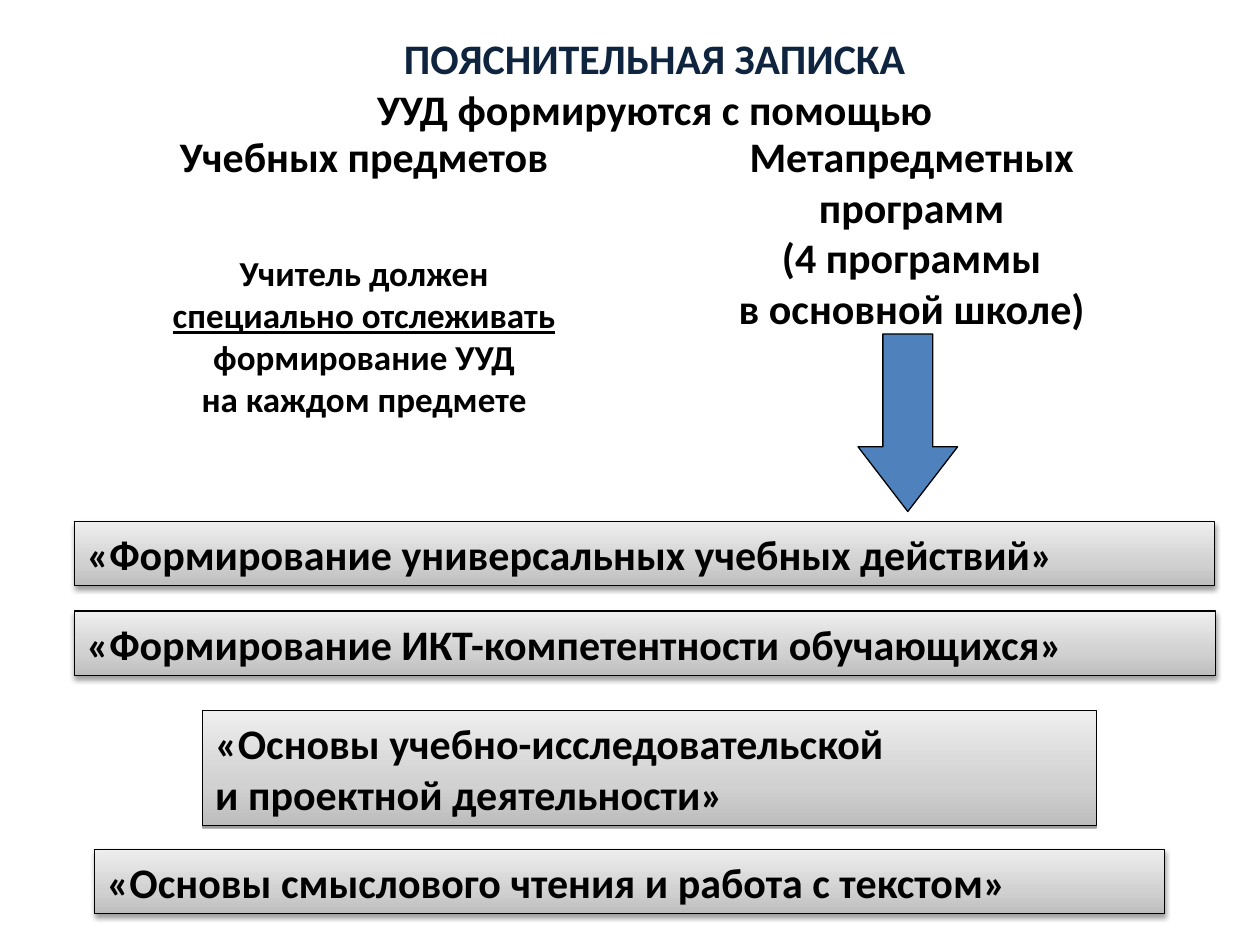
"""Builds the slide on how universal learning actions are formed."""
from dataclasses import dataclass

from pptx import Presentation
from pptx import util as u
from pptx.dml.color import RGBColor
from pptx.enum import shapes, text
from pptx.oxml import parse_xml
from pptx.oxml.ns import nsdecls

BLACK, NAVY, BLUE = "000000", "0F243E", "4F81BD"
GRADIENT = ((0, "BDBDBD"), (35, "D1D1D1"), (100, "EEEEEE"))


@dataclass
class Area:
    left: float
    top: float
    width: float
    height: float

    def lengths(self) -> list:
        return [u.Inches(n) for n in (self.left, self.top, self.width, self.height)]


@dataclass
class Label:
    area: Area
    words: str
    size: int = 24
    anchor: text.MSO_ANCHOR = text.MSO_ANCHOR.TOP


@dataclass
class Program:
    area: Area
    words: str
    wrap: bool = False
    blur: float = 3.1


HEADING = Label(Area(2.32, 0.21, 5.75, 0.91),
                "ПОЯСНИТЕЛЬНАЯ ЗАПИСКА\nУУД формируются с помощью")
TEACHER = Label(Area(1.12, 1.78, 3.54, 1.77),
                "Учитель должен\vспециально отслеживать\vформирование УУД\vна каждом предмете",
                20, text.MSO_ANCHOR.MIDDLE)
SUBJECTS = Label(Area(0.99, 0.99, 3.8, 0.5), "Учебных предметов")
META = Label(Area(5.59, 0.99, 3.29, 2.12),
             "Метапредметных программ\v(4 программы\vв основной школе)")
PROGRAMS = (
    Program(Area(0.59, 4.14, 9.05, 0.51), "«Формирование универсальных учебных действий»"),
    Program(Area(0.59, 4.85, 9.06, 0.51), "«Формирование ИКТ-компетентности обучающихся»"),
    Program(Area(1.61, 5.64, 7.09, 0.91),
            "«Основы учебно-исследовательской\vи проектной деятельности»", True, 0),
    Program(Area(0.75, 6.74, 8.49, 0.51), "«Основы смыслового чтения и работа с текстом»"),
)


def paint(color, value: str) -> None:
    color.rgb = RGBColor.from_string(value)


def write(box, words: str, size: int, align, anchor, wrap: bool = True) -> list:
    frame = box.text_frame
    frame.text = words
    frame.word_wrap = wrap
    frame.auto_size = text.MSO_AUTO_SIZE.NONE
    frame.vertical_anchor = anchor
    spans = []
    for para in frame.paragraphs:
        para.alignment = align
        spans.extend(para.runs)
    for span in spans:
        span.font.name = "Calibri"
        span.font.size = u.Pt(size)
        span.font.bold = True
        paint(span.font.color, BLACK)
    return spans


def write_label(box, label: Label) -> list:
    return write(box, label.words, label.size, text.PP_ALIGN.CENTER, label.anchor)


def add_heading(page, label: Label) -> None:
    box = page.shapes.title
    box.left, box.top, box.width, box.height = label.area.lengths()
    paint(write_label(box, label)[0].font.color, NAVY)


def add_label(page, label: Label) -> list:
    return write_label(page.shapes.add_textbox(*label.area.lengths()), label)


def add_outlined(page, kind, area: Area):
    box = page.shapes.add_shape(kind, *area.lengths())
    box.shadow.inherit = False
    paint(box.line.color, BLACK) if box.line.fill.solid() is None else None
    box.line.width = u.Pt(0.75)
    return box


def add_program(page, program: Program) -> None:
    box = add_outlined(page, shapes.MSO_SHAPE.RECTANGLE, program.area)
    stops = "".join(f'<a:gs pos="{place * 1000}"><a:srgbClr val="{value}"/></a:gs>'
                    for place, value in GRADIENT)
    properties = box._element.spPr
    properties.prstGeom.addnext(parse_xml(
        f'<a:gradFill {nsdecls("a")} rotWithShape="1"><a:gsLst>{stops}</a:gsLst>'
        '<a:lin ang="16200000" scaled="0"/></a:gradFill>'))
    properties.find("{*}effectLst").append(parse_xml(
        f'<a:outerShdw {nsdecls("a")} blurRad="{u.Pt(program.blur)}" dist="{u.Pt(1.6)}" '
        f'dir="5400000" rotWithShape="0"><a:srgbClr val="{BLACK}">'
        '<a:alpha val="38000"/></a:srgbClr></a:outerShdw>'))
    write(box, program.words, 24, text.PP_ALIGN.LEFT, text.MSO_ANCHOR.MIDDLE, program.wrap)


def add_arrow(page, area: Area) -> None:
    arrow = add_outlined(page, shapes.MSO_SHAPE.DOWN_ARROW, area)
    arrow.adjustments[0], arrow.adjustments[1] = 0.5, 0.65
    arrow.fill.solid()
    paint(arrow.fill.fore_color, BLUE)


def main() -> None:
    deck = Presentation()
    deck.slide_width, deck.slide_height = u.Inches(10), u.Inches(7.5)
    page = deck.slides.add_slide(deck.slide_layouts[5])
    add_heading(page, HEADING)
    for program in PROGRAMS:
        add_program(page, program)
    add_label(page, TEACHER)[1].font.underline = True
    add_label(page, SUBJECTS)
    add_label(page, META)
    add_arrow(page, Area(6.81, 2.65, 0.79, 1.41))
    deck.save("out.pptx")


if __name__ == "__main__":
    main()
